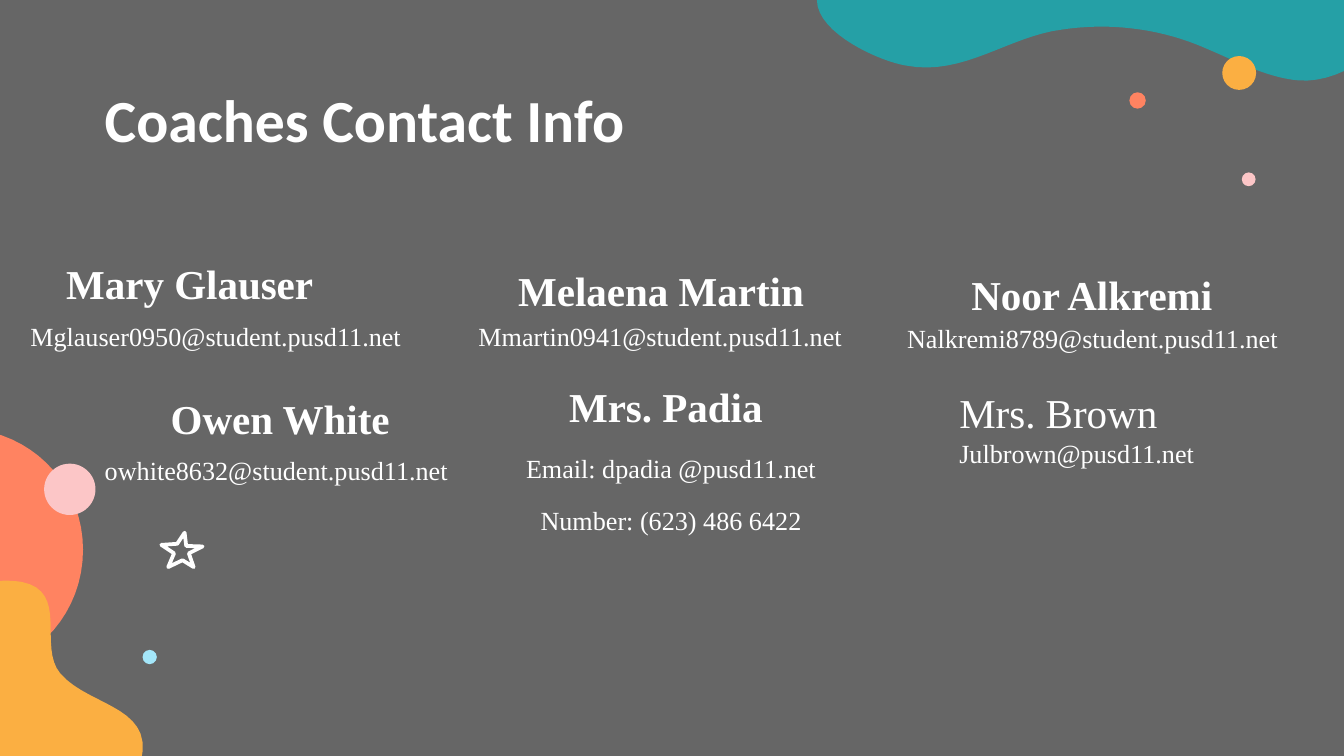
from pptx import Presentation
from pptx.dml.color import RGBColor
from pptx.enum.shapes import MSO_SHAPE
from pptx.enum.text import MSO_ANCHOR, PP_ALIGN
from pptx.util import Cm, Pt

HUES = {
    "grey": "666666", "white": "FFFFFF", "teal": "25A0A6", "amber": "FBAF42",
    "coral": "FF8361", "pink": "FCC6C7", "blue": "A4E7FA",
}
SERIF = "Times New Roman"

TEAL = [
    (0, 0),
    (0, 0.64, 1.22, 1.17, 1.68, 1.24),
    (2.77, 1.45, 3.61, 0.69, 4.63, 0.56),
    (5.49, 0.43, 6.38, 0.53, 7.17, 0.84),
    (7.8, 1.09, 8.46, 1.47, 9.1, 1.52),
    (9.99, 1.6, 11.15, 0.71, 11.18, -0.2),
    (0.05, -0.18),
]
CORAL = [
    (-0.36, 4.54),
    (0.74, 4.37, 1.57, 3.43, 1.57, 2.26),
    (1.57, 1.12, 0.74, 0.18, -0.36, 0),
]
AMBER = [
    (2.39, 3.98),
    (2.46, 3.9, 2.54, 3.8, 2.59, 3.65),
    (3.1, 2.38, 1.7, 2.43, 1.14, 1.77),
    (0.71, 1.26, 1.32, 0.22, 0.41, 0.04),
    (-0.1, -0.04, -0.48, 0.09, -0.74, 0.32),
    (-1.55, 1.16, -0.97, 3.44, 0.36, 4.08),
    (0.97, 4.08, 1.88, 4.48, 2.39, 3.98),
]
STAR = [
    (0.47, 0.04), (0.5, 0.29), (0.81, 0.3), (0.55, 0.43), (0.64, 0.69),
    (0.43, 0.56), (0.16, 0.69), (0.27, 0.43), (0.03, 0.27), (0.33, 0.25),
]


def tint(hue):
    return RGBColor.from_string(HUES[hue])


def paint(shape, hue):
    shape.shadow.inherit = False
    shape.fill.solid()
    shape.fill.fore_color.rgb = tint(hue)
    shape.line.fill.background()


def trace(path, steps=16):
    dots = [path[0]]
    for part in path[1:]:
        if len(part) == 2:
            dots.append(part)
            continue
        a, b, c, d = dots[-1], part[:2], part[2:4], part[4:]
        for i in range(1, steps + 1):
            t = i / steps
            u = 1 - t
            dots.append(tuple(
                u**3 * a[k] + 3 * u * u * t * b[k] + 3 * u * t * t * c[k] + t**3 * d[k]
                for k in (0, 1)
            ))
    return dots


def draw(slide, left, top, path):
    dots = [(Cm(left + x), Cm(top + y)) for x, y in trace(path)]
    pen = slide.shapes.build_freeform(*dots[0])
    pen.add_line_segments(dots[1:], close=True)
    return pen.convert_to_shape()


def blob(slide, left, top, path, hue):
    paint(draw(slide, left, top, path), hue)


def star(slide, left, top):
    shape = draw(slide, left, top, STAR)
    shape.shadow.inherit = False
    shape.fill.background()
    shape.line.color.rgb = tint("white")
    shape.line.width = Pt(2)


def dot(slide, x, y, size, hue):
    half = size / 2
    paint(slide.shapes.add_shape(
        MSO_SHAPE.OVAL, Cm(x - half), Cm(y - half), Cm(size), Cm(size)), hue)


def text(slide, box, rows, align=PP_ALIGN.CENTER, face=SERIF, pad=0.25,
         after=0, anchor=MSO_ANCHOR.TOP):
    frame = slide.shapes.add_textbox(*map(Cm, box)).text_frame
    frame.word_wrap = True
    frame.vertical_anchor = anchor
    frame.margin_left = frame.margin_right = Cm(0.25)
    frame.margin_top = frame.margin_bottom = Cm(pad)
    for i, (words, size, bold) in enumerate(rows):
        para = frame.add_paragraph() if i else frame.paragraphs[0]
        para.alignment = align
        para.line_spacing = 1.05
        para.space_after = Pt(after)
        run = para.add_run()
        run.text = words
        run.font.name = face
        run.font.size = Pt(size)
        run.font.bold = bold
        run.font.color.rgb = tint("white")


def card(slide, box, head, name, lines, **style):
    left, top = box[:2]
    dx, dy, width, height = head
    text(slide, box, [(line, 14, False) for line in lines], **style)
    text(slide, (left + dx, top + dy, width, height), [(name, 22, True)],
         anchor=MSO_ANCHOR.MIDDLE)


def decor(slide):
    blob(slide, 15.44, 0, TEAL, "teal")
    blob(slide, 0, 8.13, CORAL, "coral")
    blob(slide, 0, 10.96, AMBER, "amber")
    for spot in [
        (23.42, 1.38, 0.64, "amber"), (1.32, 9.25, 0.97, "pink"),
        (23.6, 3.39, 0.26, "pink"), (21.5, 1.9, 0.31, "coral"),
        (2.83, 12.42, 0.27, "blue"),
    ]:
        dot(slide, *spot)
    star(slide, 3.02, 10.03)


def staff(slide):
    card(slide, (-1.19, 5.77, 10.54, 1.6), (1.75, -0.92, 6.05, 0.97),
         "Mary Glauser", ["Mglauser0950@student.pusd11.net"], after=10)
    card(slide, (7.92, 5.77, 9.12, 1.4), (1.58, -0.72, 5.99, 0.81),
         "Melaena Martin", ["Mmartin0941@student.pusd11.net"], after=10)
    card(slide, (16.46, 5.82, 8.38, 1.19), (1.42, -0.77, 5.51, 0.97),
         "Noor Alkremi", ["Nalkremi8789@student.pusd11.net"], after=10)
    card(slide, (1.73, 8.43, 8.89, 0.86), (0.91, -1.04, 5.31, 0.97),
         "Owen White", ["owhite8632@student.pusd11.net"],
         align=PP_ALIGN.LEFT, pad=0.13)
    card(slide, (9.04, 8.28, 7.29, 2.03), (0.89, -1.12, 5.31, 0.97),
         "Mrs. Padia", ["Email: dpadia @pusd11.net", "Number: (623) 486 6422"],
         after=10)
    text(slide, (17.88, 7.14, 7.29, 1.8),
         [("Mrs. Brown", 22, False), ("Julbrown@pusd11.net", 14, False)],
         align=PP_ALIGN.LEFT, pad=0.13)


def main():
    deck = Presentation()
    deck.slide_width, deck.slide_height = Cm(25.4), Cm(14.29)
    slide = deck.slides.add_slide(deck.slide_layouts[6])
    slide.background.fill.solid()
    slide.background.fill.fore_color.rgb = tint("grey")
    decor(slide)
    text(slide, (1.73, 1.24, 21.67, 1.6), [("Coaches Contact Info", 32, True)],
         align=PP_ALIGN.LEFT, face="Calibri")
    staff(slide)
    deck.save("out.pptx")


if __name__ == "__main__":
    main()
